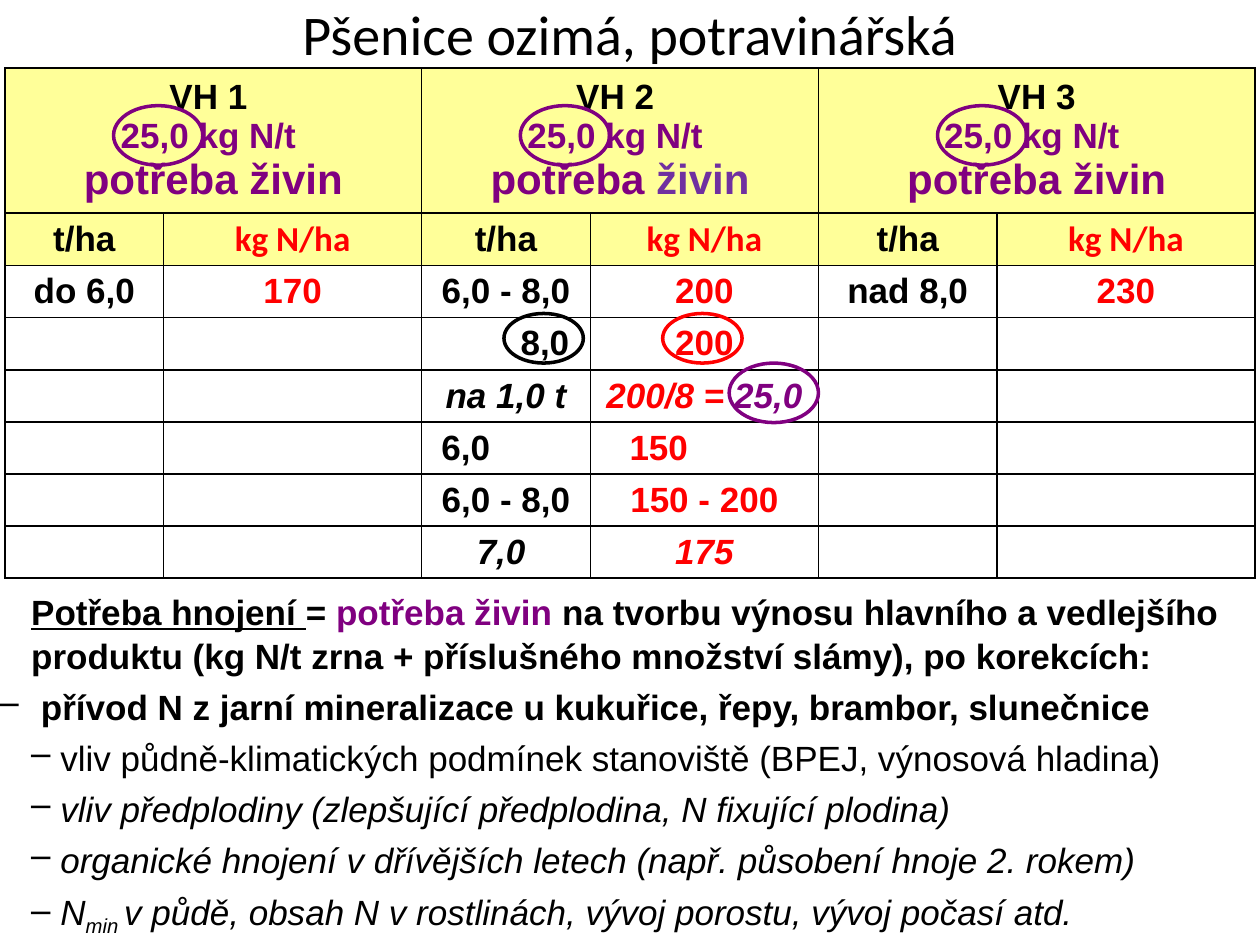
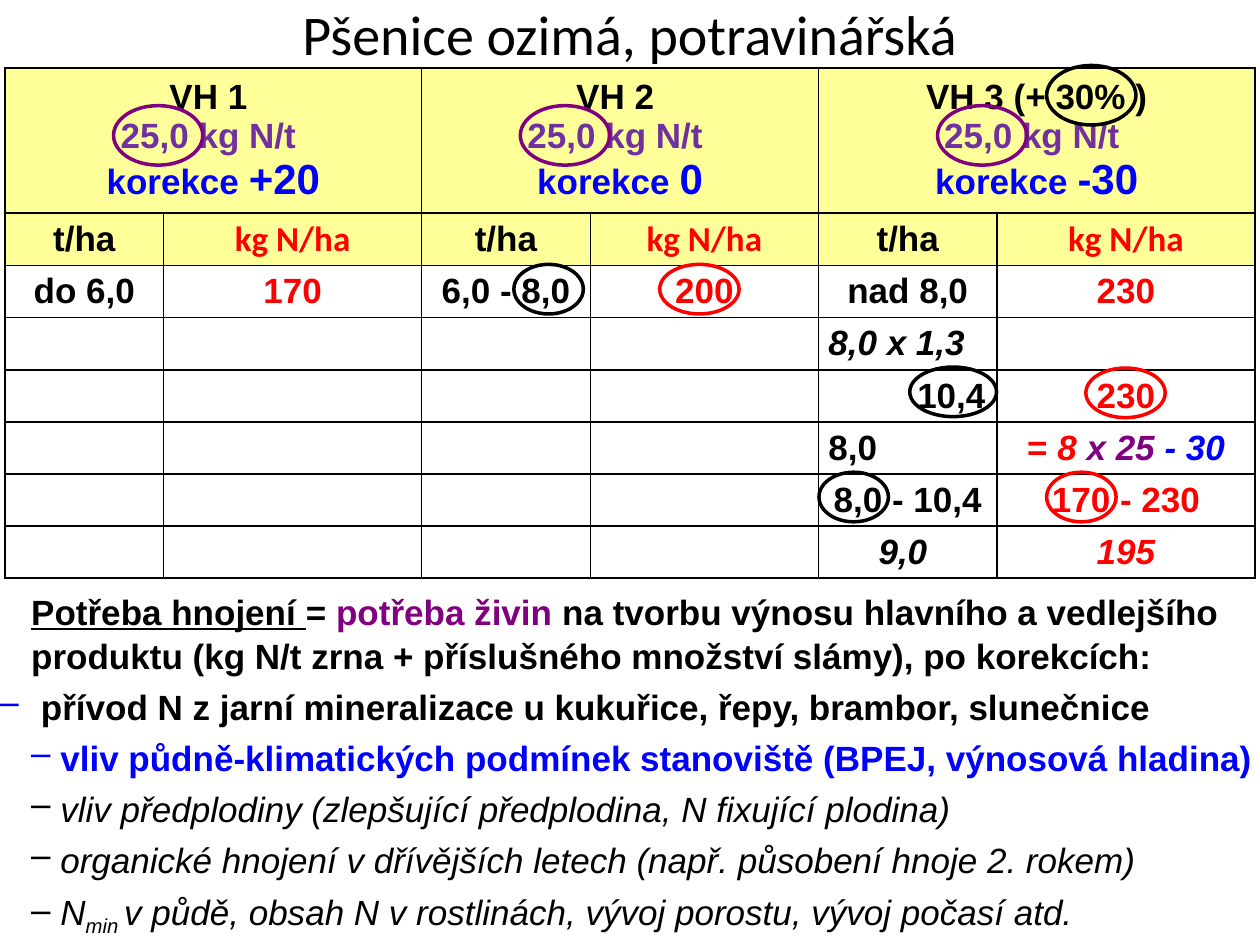
from typing import NamedTuple

from lxml import etree
from pptx import Presentation
from pptx.dml.color import RGBColor
from pptx.enum.shapes import MSO_SHAPE
from pptx.enum.text import MSO_ANCHOR, MSO_AUTO_SIZE, PP_ALIGN
from pptx.oxml.ns import qn
from pptx.util import Cm, Pt

OVAL = MSO_SHAPE.OVAL
MIDDLE = MSO_ANCHOR.MIDDLE
NO_AUTO_SIZE = MSO_AUTO_SIZE.NONE
LEFT, CENTER = PP_ALIGN.LEFT, PP_ALIGN.CENTER

BLACK, RED, BLUE = "000000", "FF0000", "0000FF"
PURPLE, VIOLET, YELLOW = "800080", "7030A0", "FFFF99"
BODY_FONT, TITLE_FONT = "Arial", "Calibri"
TITLE_ONLY_LAYOUT = 5

COLUMN_WIDTHS = (3.2, 5.2, 3.4, 4.6, 3.6, 5.2)
ROW_HEIGHTS = (2.92,) + (1.05,) * 7
TABLE_LEFT, TABLE_TOP = 0.1, 1.37
HEADER_ROWS = 2


class Piece(NamedTuple):
    """A stretch of text in one style."""
    text: str
    color: str = BLACK
    size: int = 20
    bold: bool = True
    italic: bool = False
    underline: bool = False
    subscript: bool = False
    font: str = BODY_FONT


class Line(NamedTuple):
    """One paragraph; indents are in centimetres."""
    pieces: list[Piece]
    align: PP_ALIGN = CENTER
    margin: float = 0
    first_indent: float = 0
    bullet: str = ""


class Ring(NamedTuple):
    """An ellipse around a number, in centimetres."""
    left: float
    top: float
    color: str
    width: float = 1.6
    height: float = 1.0


Cells = dict[tuple[int, int], Line]


class WheatSlide(NamedTuple):
    headings: list[list[Line]]
    cells: Cells
    rings: list[Ring]
    notes: list[Line]


def rgb(color: str) -> RGBColor:
    return RGBColor.from_string(color)


def one(text: str, color: str = BLACK, italic: bool = False,
        align: PP_ALIGN = CENTER, margin: float = 0) -> Line:
    """A paragraph with a single style."""
    return Line([Piece(text, color, italic=italic)], align, margin)


def write_line(paragraph, line: Line) -> None:
    paragraph.alignment = line.align
    properties = paragraph._p.get_or_add_pPr()
    properties.set("marL", str(Cm(line.margin)))
    properties.set("indent", str(Cm(line.first_indent)))
    if line.bullet:
        etree.SubElement(properties, qn("a:buChar"), char=line.bullet)
    for piece in line.pieces:
        run = paragraph.add_run()
        run.text = piece.text
        font = run.font
        font.name, font.size = piece.font, Pt(piece.size)
        font.bold, font.italic = piece.bold, piece.italic
        font.underline = piece.underline
        font.color.rgb = rgb(piece.color)
        if piece.subscript:
            run._r.get_or_add_rPr().set("baseline", "-25000")


def write_lines(text_frame, lines: list[Line]) -> None:
    for index, line in enumerate(lines):
        paragraph = text_frame.add_paragraph() if index else text_frame.paragraphs[0]
        write_line(paragraph, line)


def add_borders(cell) -> None:
    properties = cell._tc.get_or_add_tcPr()
    for side in ("a:lnL", "a:lnR", "a:lnT", "a:lnB"):
        border = etree.SubElement(properties, qn(side), w=str(Pt(1)))
        fill = etree.SubElement(border, qn("a:solidFill"))
        etree.SubElement(fill, qn("a:srgbClr"), val=BLACK)


def add_title(slide, text: str) -> None:
    title = slide.shapes.title
    title.left, title.top, title.width, title.height = Cm(0), Cm(0), Cm(25.4), Cm(1.32)
    text_frame = title.text_frame
    text_frame.text = text
    text_frame.auto_size = NO_AUTO_SIZE
    text_frame.vertical_anchor = MIDDLE
    text_frame.margin_top = text_frame.margin_bottom = Cm(0)
    paragraph = text_frame.paragraphs[0]
    paragraph.alignment = CENTER
    font = paragraph.runs[0].font
    font.name, font.size, font.color.rgb = TITLE_FONT, Pt(32), rgb(BLACK)


def add_yield_table(slide, headings: list[list[Line]], cells: Cells) -> None:
    table = slide.shapes.add_table(
        len(ROW_HEIGHTS), len(COLUMN_WIDTHS), Cm(TABLE_LEFT), Cm(TABLE_TOP),
        Cm(sum(COLUMN_WIDTHS)), Cm(sum(ROW_HEIGHTS))).table
    table.first_row = table.horz_banding = False
    for column, width in zip(table.columns, COLUMN_WIDTHS):
        column.width = Cm(width)
    for row_index, height in enumerate(ROW_HEIGHTS):
        table.rows[row_index].height = Cm(height)
        for cell in table.rows[row_index].cells:
            add_borders(cell)
            cell.vertical_anchor = MIDDLE
            cell.margin_left = cell.margin_right = Cm(0.2)
            cell.margin_top = cell.margin_bottom = Cm(0.1)
            if row_index < HEADER_ROWS:
                cell.fill.solid()
                cell.fill.fore_color.rgb = rgb(YELLOW)
            else:
                cell.fill.background()
    for index, lines in enumerate(headings):
        heading = table.cell(0, 2 * index)
        heading.merge(table.cell(0, 2 * index + 1))
        write_lines(heading.text_frame, lines)
    for (row, column), line in (SHARED_CELLS | cells).items():
        write_lines(table.cell(row, column).text_frame, [line])


def add_ring(slide, ring: Ring) -> None:
    shape = slide.shapes.add_shape(
        OVAL, Cm(ring.left), Cm(ring.top), Cm(ring.width), Cm(ring.height))
    shape.shadow.inherit = False
    shape.fill.background()
    shape.line.color.rgb = rgb(ring.color)
    shape.line.width = Pt(2)


def add_notes_text(slide, lines: list[Line]) -> None:
    """The explanation of the fertilising need below the table."""
    text_frame = slide.shapes.add_textbox(
        Cm(-0.89), Cm(11.73), Cm(26.6), Cm(7)).text_frame
    text_frame.word_wrap = True
    for index, line in enumerate(lines):
        paragraph = text_frame.add_paragraph() if index else text_frame.paragraphs[0]
        paragraph.line_spacing = 1.05
        paragraph.space_after = Pt(4)
        write_line(paragraph, line)


def note(*pieces: Piece, first_indent: float = 0, bullet: str = "–") -> Line:
    return Line(list(pieces), LEFT, 1.27, first_indent, bullet)


def light(text: str, italic: bool = True, subscript: bool = False) -> Piece:
    return Piece(text, bold=False, italic=italic, subscript=subscript)


def need_notes(dash_color: str, soil: Piece) -> list[Line]:
    """All notes; the slides differ in one dash colour and the soil line."""
    return [
        note(Piece("Potřeba hnojení ", underline=True), Piece("= "),
             Piece("potřeba živin ", PURPLE),
             Piece("na tvorbu výnosu hlavního a vedlejšího produktu "
                   "(kg N/t zrna + příslušného množství slámy), po korekcích:"),
             bullet=""),
        note(Piece(" ", dash_color, bold=False),
             Piece("přívod N z jarní mineralizace u kukuřice, řepy, brambor, slunečnice"),
             first_indent=-0.64),
        note(soil),
        note(light(" vliv předplodiny (zlepšující předplodina, N fixující plodina)")),
        note(light(" organické hnojení v dřívějších letech (např. působení hnoje 2. rokem)")),
        note(light(" N"), light("min ", subscript=True),
             light("v půdě, obsah N v rostlinách, vývoj porostu, vývoj počasí atd.")),
    ]


def heading(level: str, rate_color: str, *last: Piece) -> list[Line]:
    return [one(level), one("25,0 kg N/t ", rate_color), Line(list(last))]


def need_heading(level: str, second_color: str = PURPLE) -> list[Line]:
    return heading(level, PURPLE, Piece("potřeba ", PURPLE, 24),
                   Piece("živin", second_color, 24))


def correction_heading(level: str, correction: str) -> list[Line]:
    return heading(level, VIOLET, Piece("korekce ", BLUE), Piece(correction, BLUE, 24))


SHARED_CELLS: Cells = {
    (2, 0): one("do 6,0"), (2, 1): one("170", RED),
    (2, 2): one("6,0 - 8,0"), (2, 3): one("200", RED),
    (2, 4): one("nad 8,0"), (2, 5): one("230", RED),
}
for first in (0, 2, 4):
    SHARED_CELLS[1, first] = one("t/ha")
    SHARED_CELLS[1, first + 1] = Line([Piece("kg N/ha", RED, font=TITLE_FONT)])

RATE_RINGS = [Ring(left, 2.13, PURPLE, 1.8, 1.2) for left in (2.29, 10.49, 18.9)]
SOIL_TEXT = " vliv půdně-klimatických podmínek stanoviště (BPEJ, výnosová hladina)"

SLIDES = [
    WheatSlide(
        headings=[need_heading("VH 1 "), need_heading("VH 2 ", VIOLET),
                  need_heading("VH 3")],
        cells={
            (3, 2): one("8,0", margin=1.57), (3, 3): one("200", RED),
            (4, 2): one("na 1,0 t", italic=True),
            (4, 3): Line([Piece("200/8 = ", RED, italic=True),
                          Piece("25,0", PURPLE, italic=True)]),
            (5, 2): one("6,0", align=LEFT, margin=0.2),
            (5, 3): one("150", RED, align=LEFT, margin=0.59),
            (6, 2): one("6,0 - 8,0"), (6, 3): one("150 - 200", RED),
            (7, 2): one("7,0 ", italic=True), (7, 3): one("175", RED, italic=True),
        },
        rings=RATE_RINGS + [
            Ring(10.16, 6.32, BLACK), Ring(13.36, 6.32, RED),
            Ring(14.7, 7.32, PURPLE, 1.8, 1.2)],
        notes=need_notes(BLACK, light(SOIL_TEXT, italic=False)),
    ),
    WheatSlide(
        headings=[correction_heading("VH 1 ", "+20"), correction_heading("VH 2 ", "0"),
                  correction_heading("VH 3 (+ 30% )", "-30")],
        cells={
            (3, 4): one("8,0 x 1,3", italic=True, align=LEFT),
            (4, 4): one("10,4", margin=1.76), (4, 5): one("230", RED),
            (5, 4): one("8,0", align=LEFT),
            (5, 5): Line([Piece("= ", RED), Piece("8 ", RED, italic=True),
                          Piece("x 25 ", PURPLE, italic=True),
                          Piece("- 30", BLUE, italic=True)]),
            (6, 4): one("8,0 - 10,4"), (6, 5): one("170 - 230", RED),
            (7, 4): one("9,0 ", italic=True), (7, 5): one("195", RED, italic=True),
        },
        rings=RATE_RINGS + [
            Ring(21.1, 1.32, BLACK, 1.8, 1.2),
            Ring(21.89, 7.42, RED), Ring(18.34, 7.4, BLACK, 1.75),
            Ring(16.51, 9.52, BLACK, 1.4), Ring(10.36, 5.33, BLACK, 1.4),
            Ring(21.1, 9.52, RED, 1.4), Ring(13.3, 5.33, RED)],
        notes=need_notes(BLUE, Piece(SOIL_TEXT, BLUE)),
    ),
]


def main() -> None:
    presentation = Presentation()
    presentation.slide_width, presentation.slide_height = Cm(25.4), Cm(19.05)
    for content in SLIDES:
        slide = presentation.slides.add_slide(presentation.slide_layouts[TITLE_ONLY_LAYOUT])
        add_title(slide, "Pšenice ozimá, potravinářská")
        add_yield_table(slide, content.headings, content.cells)
        add_notes_text(slide, content.notes)
        for ring in content.rings:
            add_ring(slide, ring)
    presentation.save("out.pptx")


if __name__ == "__main__":
    main()
